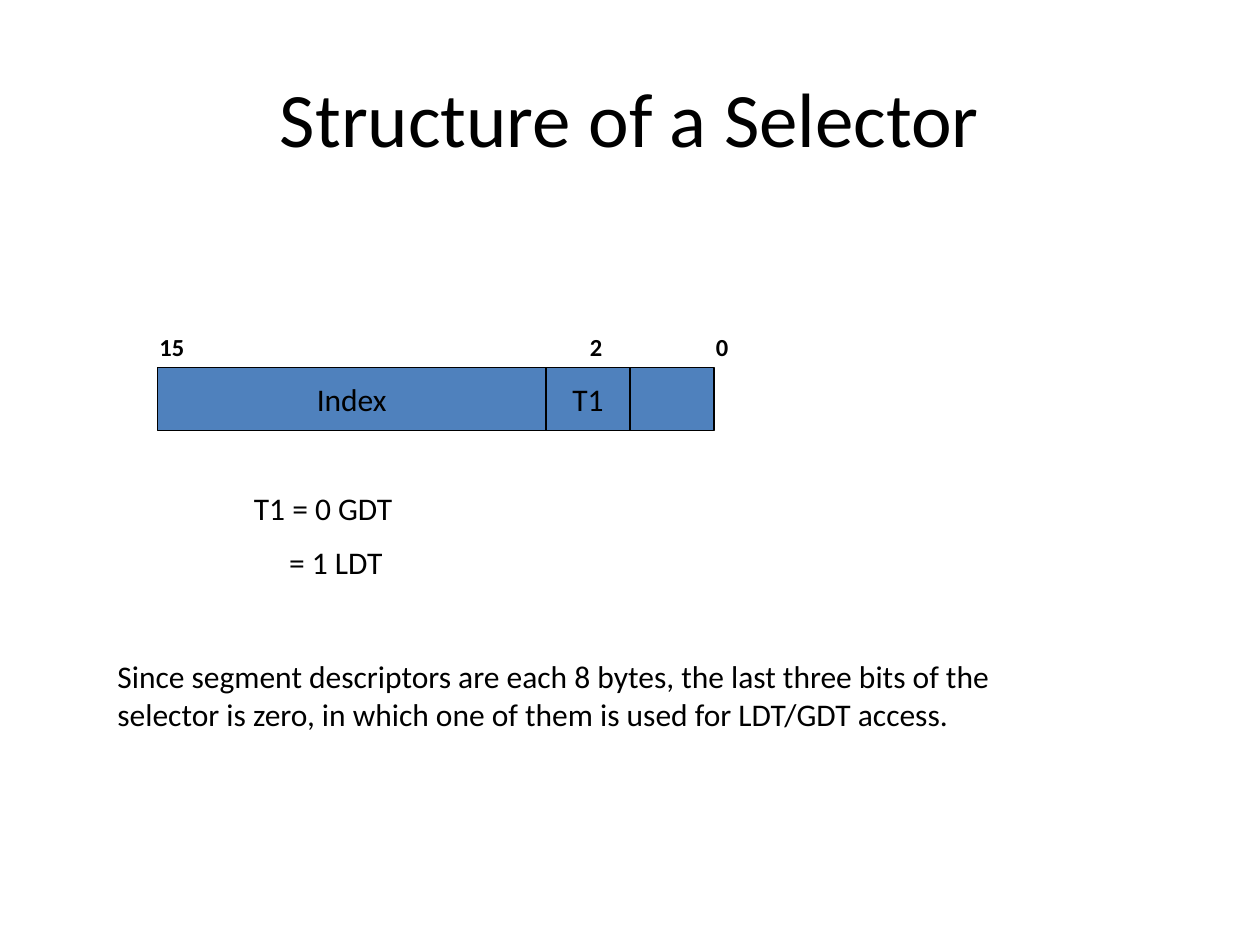
from dataclasses import dataclass

from pptx import Presentation
from pptx.dml.color import RGBColor
from pptx.enum.shapes import MSO_SHAPE
from pptx.enum.text import MSO_ANCHOR, PP_ALIGN
from pptx.util import Inches, Pt


@dataclass(frozen=True)
class Theme:
    font: str = "Calibri"
    ink: RGBColor = RGBColor(0x00, 0x00, 0x00)
    field: RGBColor = RGBColor(0x4F, 0x81, 0xBD)
    title: int = 44
    body: int = 18
    bit: int = 14
    outline: float = 0.75


THEME = Theme()
CELLS_PER_INCH = 12  # the page is a grid of 120 columns by 90 rows


def grid(*cells):
    return [Inches(cell / CELLS_PER_INCH) for cell in cells]


def write(frame, lines, size, align=PP_ALIGN.LEFT, bold=False):
    for number, line in enumerate(lines):
        para = frame.paragraphs[0] if number == 0 else frame.add_paragraph()
        para.text = line
        para.alignment = align
        para.space_before = Pt(size / 2 if number else 0)
        para.font.name = THEME.font
        para.font.size = Pt(size)
        para.font.bold = bold
        para.font.color.rgb = THEME.ink


def add_text(page, area, lines, size, **style):
    frame = page.shapes.add_textbox(*grid(*area)).text_frame
    frame.word_wrap = True
    write(frame, lines, size, **style)
    return frame


def add_field(page, area, name):
    box = page.shapes.add_shape(MSO_SHAPE.RECTANGLE, *grid(*area))
    box.shadow.inherit = False
    box.fill.solid()
    box.fill.fore_color.rgb = THEME.field
    box.line.color.rgb = THEME.ink
    box.line.width = Pt(THEME.outline)
    if name:
        box.text_frame.word_wrap = False
        box.text_frame.vertical_anchor = MSO_ANCHOR.MIDDLE
        write(box.text_frame, [name], THEME.body, PP_ALIGN.CENTER)


def add_register(page, left, top, fields):
    for name, width in fields:
        add_field(page, (left, top, width, 6), name)
        left += width


def main():
    deck = Presentation()
    deck.slide_width, deck.slide_height = grid(120, 90)
    page = deck.slides.add_slide(deck.slide_layouts[6])

    # Title
    title = add_text(page, (6, 3.6, 108, 15), ["Structure of a Selector"],
                     THEME.title, align=PP_ALIGN.CENTER)
    title.vertical_anchor = MSO_ANCHOR.MIDDLE

    # Selector fields and the bit numbers above them
    add_register(page, 15, 35, [("Index", 37), ("T1", 8), ("", 8)])
    for bit, left, width in [("15", 14, 7), ("2", 55, 4), ("0", 67, 4)]:
        add_text(page, (left, 31, width, 4), [bit], THEME.bit, bold=True)

    # Meaning of the T1 bit, with the second case indented
    cases = add_text(page, (23, 46, 40, 13), ["T1 = 0 GDT", "= 1 LDT"], THEME.body)
    cases.paragraphs[1]._p.get_or_add_pPr().set("marL", str(Inches(0.28)))

    # Explanation
    add_text(page, (10, 62, 86, 15.6), [
        "Since segment descriptors are each 8 bytes, the last three bits of the "
        "selector is zero, in which one of them is used for LDT/GDT access."
    ], THEME.body)

    deck.save("out.pptx")


if __name__ == "__main__":
    main()
